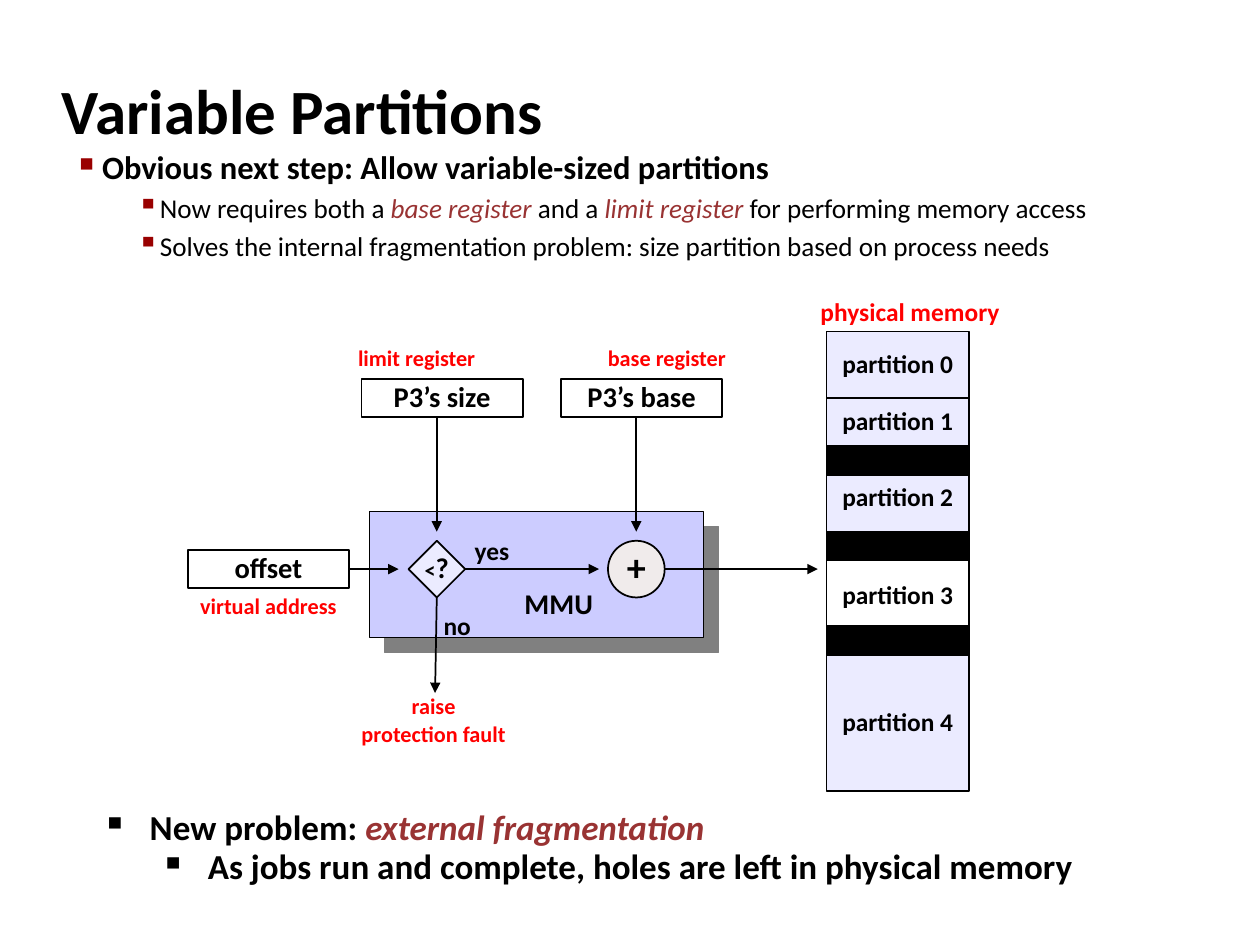
from lxml import etree
from pptx import Presentation
from pptx.dml.color import RGBColor
from pptx.enum.shapes import MSO_CONNECTOR, MSO_SHAPE
from pptx.enum.text import MSO_ANCHOR, MSO_AUTO_SIZE, PP_ALIGN
from pptx.oxml.ns import qn
from pptx.util import Pt

FONT = "Calibri"
COLORS = {
    "black": "000000", "white": "FFFFFF", "red": "FF0000", "term": "993333",
    "bullet": "990000", "mmu": "CCCCFF", "used": "EBEBFF", "adder": "F0EBEB",
    "shadow": "808080",
}


def rgb(name):
    return RGBColor.from_string(COLORS[name])


def style(font, size, color="black", bold=True, italic=False):
    font.name, font.size = FONT, Pt(size)
    font.bold, font.italic = bold, italic
    font.color.rgb = rgb(color)


def add_text(shape, text, size, color="black", anchor=MSO_ANCHOR.MIDDLE):
    """Put centred bold text in a shape, with no margins and no wrapping."""
    tf = shape.text_frame
    tf.word_wrap = False
    tf.margin_left = tf.margin_right = tf.margin_top = tf.margin_bottom = 0
    tf.vertical_anchor = anchor
    tf.text = text
    for i, p in enumerate(tf.paragraphs):
        p.alignment, p.line_spacing = PP_ALIGN.CENTER, 0.94
        if i:
            p.space_before = Pt(1.6)
        for r in p.runs:
            style(r.font, size, color)


def add_box(s, x, y, w, h, fill, text="", size=16.3, kind=MSO_SHAPE.RECTANGLE):
    sp = s.shapes.add_shape(kind, Pt(x), Pt(y), Pt(w), Pt(h))
    sp.shadow.inherit = False
    sp.fill.solid()
    sp.fill.fore_color.rgb = rgb(fill)
    sp.line.color.rgb = rgb("black")
    sp.line.width = Pt(1)
    if text:
        add_text(sp, text, size)
    return sp


def add_label(s, text, cx, top, size, color="black", w=100, h=20):
    """Place free text centred on cx."""
    sp = s.shapes.add_textbox(Pt(cx - w / 2), Pt(top), Pt(w), Pt(h))
    add_text(sp, text, size, color, MSO_ANCHOR.TOP)


def add_arrow(s, x1, y1, x2, y2, start=None, site=0):
    c = s.shapes.add_connector(MSO_CONNECTOR.STRAIGHT, Pt(x1), Pt(y1), Pt(x2), Pt(y2))
    if start is not None:
        c.begin_connect(start, site)
    c.line.color.rgb = rgb("black")
    c.line.width = Pt(1)
    ln = c._element.spPr.find(qn("a:ln"))
    etree.SubElement(ln, qn("a:tailEnd"), type="triangle")
    etree.SubElement(c._element.spPr, qn("a:effectLst"))


def add_hard_shadow(sp):
    effects = sp._element.spPr.find(qn("a:effectLst"))
    shadow = etree.SubElement(effects, qn("a:outerShdw"), dist=str(Pt(12)),
                              dir="2700000", algn="tl", rotWithShape="0")
    etree.SubElement(shadow, qn("a:srgbClr"), val=COLORS["shadow"])


def add_bullet(p, char, left, hang, color, percent):
    pPr = p._p.get_or_add_pPr()
    pPr.set("marL", str(Pt(left)))
    pPr.set("indent", str(-Pt(hang)))
    clr = etree.SubElement(pPr, qn("a:buClr"))
    etree.SubElement(clr, qn("a:srgbClr"), val=COLORS[color])
    etree.SubElement(pPr, qn("a:buSzPct"), val=str(percent * 1000))
    etree.SubElement(pPr, qn("a:buChar"), char=char)


def add_bullet_list(s, x, y, w, h, items, spacing=1.0):
    """Items are (level, bullet arguments, size, bold, space before, parts);
    every second part is an emphasised term."""
    tf = s.shapes.add_textbox(Pt(x), Pt(y), Pt(w), Pt(h)).text_frame
    tf.word_wrap = True
    for i, (level, bullet, size, bold, before, parts) in enumerate(items):
        p = tf.add_paragraph() if i else tf.paragraphs[0]
        p.level = level
        add_bullet(p, *bullet)
        p.line_spacing, p.space_before = spacing, Pt(before)
        for j, part in enumerate(parts):
            term = j % 2 == 1
            r = p.add_run()
            r.text = part
            style(r.font, size, "term" if term else "black", bold, term)


def add_title(s, x, y, w, h, text):
    sp = s.shapes.title
    sp.left, sp.top, sp.width, sp.height = Pt(x), Pt(y), Pt(w), Pt(h)
    tf = sp.text_frame
    tf.text = text
    tf.auto_size = MSO_AUTO_SIZE.NONE
    tf.vertical_anchor = MSO_ANCHOR.MIDDLE
    p = tf.paragraphs[0]
    p.alignment, p.line_spacing = PP_ALIGN.LEFT, 0.94
    style(p.runs[0].font, 36)


def draw_memory(s, x, y, w):
    add_label(s, "physical memory", x + w / 2 + 7, y - 19, 14.5, "red", w=136)
    partitions = [(0, 38, "used"), (38, 27.5, "used"), (75.5, 39, "used"),
                  (130.5, 41, "white"), (185, 77.5, "used")]
    for i, (top, h, fill) in enumerate(partitions):
        add_box(s, x, y + top, w, h, fill, f"partition {i}", 14.5)
    for top in (65.5, 114.5, 168.5):
        add_box(s, x, y + top, w, 16.5, "black")


def draw_translation(s, x, y, memory_x):
    """Address check and relocation, from the offset to the memory."""
    box_w, box_h, node = 92.2, 21.6, 32.4
    row = y + 127.2
    compare_x, adder_x = x + 142.3, x + 256.3

    mmu = add_box(s, x + 104, y + 94.3, 190.8, 72, "mmu")
    mmu.line.width = Pt(0.75)
    add_hard_shadow(mmu)
    add_label(s, "MMU", x + 212, y + 138.2, 16.3)

    offset = add_box(s, x, row - box_h / 2, box_w, box_h, "white", "offset")
    add_label(s, "virtual address", x + box_w / 2, y + 141.8, 12.7, "red")

    registers = [("limit register", "P3’s size", compare_x, -14.5),
                 ("base register", "P3’s base", adder_x, 14.5)]
    for caption, value, node_x, shift in registers:
        cx = node_x + 3
        add_box(s, cx - box_w / 2, y + 18.7, box_w, box_h, "white", value)
        add_label(s, caption, cx + shift, y, 12.7, "red")
        add_arrow(s, node_x, y + 18.7 + box_h, node_x, y + 105.8)

    top = row - node / 2
    compare = add_box(s, compare_x - node / 2, top, node, node, "used", "<",
                      12.7, MSO_SHAPE.DIAMOND)
    r = compare.text_frame.paragraphs[0].add_run()
    r.text = "?"
    style(r.font, 16.3)
    add_box(s, adder_x - node / 2, top, node, node, "adder", "+", 21.8,
            MSO_SHAPE.OVAL)

    add_arrow(s, x + box_w, row, x + 120.5, row, offset, 3)
    add_arrow(s, compare_x + node / 2, row, x + 235, row, compare, 3)
    add_arrow(s, adder_x + node / 2, row, memory_x - 5, row)
    add_arrow(s, compare_x, row + node / 2, x + 141.3, y + 198, compare, 2)

    add_label(s, "yes", x + 173.8, y + 109.4, 14.5, w=36)
    add_label(s, "no", x + 154, y + 152, 14.5, w=30)
    add_label(s, "raise\nprotection fault", x + 140.5, y + 198.7, 12.7, "red", h=34)


def main():
    prs = Presentation()
    prs.slide_width, prs.slide_height = Pt(720), Pt(540)
    s = prs.slides.add_slide(prs.slide_layouts[5])

    add_title(s, 28, 34.5, 598, 60, "Variable Partitions")
    small = ("▪", 53.3, 13, "bullet", 110)
    add_bullet_list(s, 31, 80.6, 622, 93.6, [
        (0, ("■", 20.2, 13, "bullet", 60), 18.6, True, 0,
         ["Obvious next step: Allow variable-sized partitions"]),
        (1, small, 15.5, False, 3,
         ["Now requires both a ", "base register", " and a ", "limit register",
          " for performing memory access"]),
        (1, small, 15.5, False, 3,
         ["Solves the internal fragmentation problem: size partition based on process needs"]),
    ])
    memory_x = 472.3
    draw_memory(s, memory_x, 189.4, 81.4)
    draw_translation(s, 107.3, 198, memory_x)
    add_bullet_list(s, 44, 458.6, 596, 52.6, [
        (0, ("▪", 34.5, 27.3, "black", 100), 20, True, 0,
         ["New problem: ", "external fragmentation"]),
        (1, ("▪", 67.7, 27.3, "black", 100), 20, True, 0,
         ["As jobs run and complete, holes are left in physical memory"]),
    ], 0.94)
    prs.save("out.pptx")


if __name__ == "__main__":
    main()
